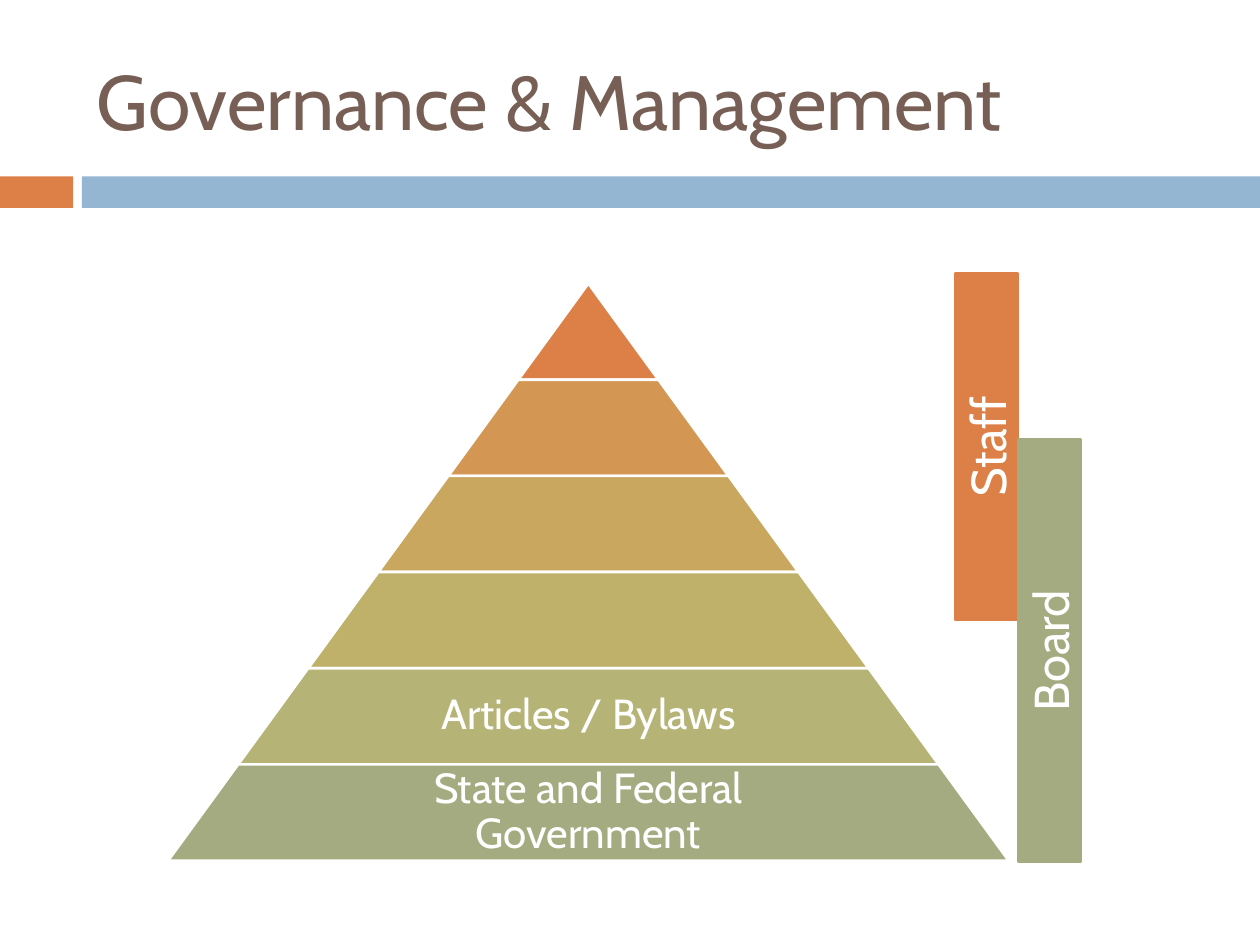
from pptx import Presentation
from pptx import util as u
from pptx.dml.color import RGBColor
from pptx.enum import shapes, text

COLORS = {
    "title": "775F55",
    "orange": "DD8047",
    "blue": "94B6D2",
    "green": "A5AB81",
    "white": "FFFFFF",
}
TIERS = [
    (COLORS["orange"], None),
    ("D39753", None),
    ("C9A75F", None),
    ("BFB16A", None),
    ("B5B476", "Articles / Bylaws"),
    (COLORS["green"], "State and Federal Government"),
]
PYRAMID_CENTER, PYRAMID_TOP = 4.67, 2.25
PYRAMID_WIDTH, PYRAMID_HEIGHT = 6.67, 4.58
LABEL_SHARE = 0.65


def write(frame, content, size, color=COLORS["white"], align=text.PP_ALIGN.CENTER,
          margins=(0.1, 0.05), spacing=None, vert=None):
    frame.word_wrap = True
    frame.vertical_anchor = text.MSO_ANCHOR.MIDDLE
    frame.margin_left = frame.margin_right = u.Inches(margins[0])
    frame.margin_top = frame.margin_bottom = u.Inches(margins[1])
    if vert:
        frame._txBody.bodyPr.set("vert", vert)
    paragraph = frame.paragraphs[0]
    paragraph.alignment = align
    if spacing:
        paragraph.line_spacing = spacing
    run = paragraph.add_run()
    run.text = content
    run.font.name = "Cabin"
    run.font.size = u.Pt(size)
    run.font.color.rgb = RGBColor.from_string(color)


class SlideBuilder:
    def __init__(self, slide):
        self.slide = slide
        self.line_width = u.Pt(1.5)

    def block(self, kind, box, fill, line=None):
        block = self.slide.shapes.add_shape(kind, *map(u.Inches, box))
        block.shadow.inherit = False
        block.fill.solid()
        block.fill.fore_color.rgb = RGBColor.from_string(fill)
        if line:
            block.line.color.rgb = RGBColor.from_string(line)
            block.line.width = self.line_width
        else:
            block.line.fill.background()
        return block

    def bar(self, box, fill):
        return self.block(shapes.MSO_SHAPE.RECTANGLE, box, fill)

    def label(self, box, content, size, **style):
        label = self.slide.shapes.add_textbox(*map(u.Inches, box))
        write(label.text_frame, content, size, **style)

    def role(self, box, name, fill):
        role = self.block(shapes.MSO_SHAPE.RECTANGLE, box, fill, line=fill)
        write(role.text_frame, name, 28, vert="vert270")

    def pyramid(self):
        height = PYRAMID_HEIGHT / len(TIERS)
        step = PYRAMID_WIDTH / len(TIERS)
        for level, (fill, name) in enumerate(TIERS):
            width = step * (level + 1)
            top = PYRAMID_TOP + height * level
            tier = self.block(shapes.MSO_SHAPE.TRAPEZOID,
                              (PYRAMID_CENTER - width / 2, top, width, height),
                              fill, line=COLORS["white"])
            tier.adjustments[0] = step / 2 / height
            if name:
                span = width * LABEL_SHARE
                self.label((PYRAMID_CENTER - span / 2, top, span, height), name, 24,
                           margins=(0.03, 0.03), spacing=0.9)


def main():
    deck = Presentation()
    deck.slide_width, deck.slide_height = u.Inches(10), u.Inches(7.5)
    page = SlideBuilder(deck.slides.add_slide(deck.slide_layouts[6]))
    page.bar((0, 1.4, 0.58, 0.25), COLORS["orange"])
    page.bar((0.65, 1.4, 9.35, 0.25), COLORS["blue"])
    page.label((0.67, 0.25, 8.92, 1.08), "Governance & Management", 44,
               color=COLORS["title"], align=text.PP_ALIGN.LEFT)
    page.pyramid()
    page.role((7.58, 2.17, 0.5, 2.75), "Staff", COLORS["orange"])
    page.role((8.08, 3.49, 0.5, 3.35), "Board", COLORS["green"])
    deck.save("out.pptx")


if __name__ == "__main__":
    main()
